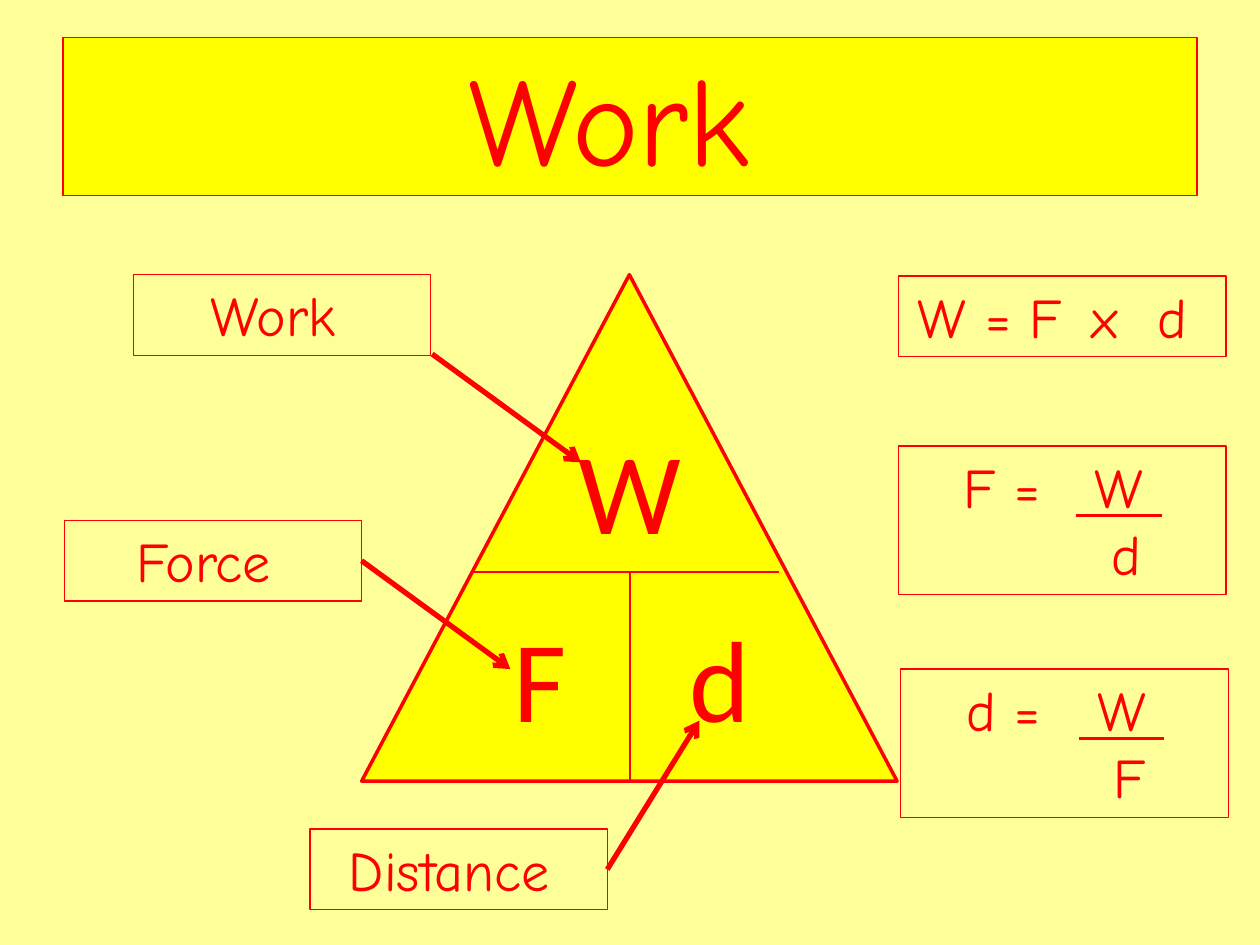
import pptx
import pptx.util
import pptx.dml.color
import pptx.enum.shapes
import pptx.enum.text
import pptx.oxml.ns
import lxml.etree

Inches = pptx.util.Inches
Pt = pptx.util.Pt
RGBColor = pptx.dml.color.RGBColor
SHAPE = pptx.enum.shapes.MSO_SHAPE
ALIGN = pptx.enum.text.PP_ALIGN
ANCHOR = pptx.enum.text.MSO_ANCHOR
qn = pptx.oxml.ns.qn

RED = RGBColor(0xFF, 0x00, 0x00)
YELLOW = RGBColor(0xFF, 0xFF, 0x00)
PALE_YELLOW = RGBColor(0xFF, 0xFF, 0x99)
HAND_FONT = "Comic Neue"
PLAIN_FONT = "Calibri"

LABEL_SIZE = (2.36, 0.64)
FORMULA_WIDTH = 2.6
FRACTION_INSET = 0.52
FRACTION_TAB = 0.89
DENOMINATOR_INDENT = 1.17


def add_text(paragraph, text, size=32, font=HAND_FONT, align=ALIGN.CENTER,
             underline=None, spacing=None):
    """Add one formatted run to a paragraph."""
    paragraph.alignment = align
    run = paragraph.add_run()
    run.text = text
    run.font.size = Pt(size)
    run.font.name = font
    run.font.color.rgb = RED
    run.font.underline = underline
    if spacing:
        run.font._element.set("spc", str(spacing * 100))


def style_shape(shape, fill=None, line_width=0.75):
    if fill is None:
        shape.fill.background()
    else:
        shape.fill.solid()
        shape.fill.fore_color.rgb = fill
    shape.line.color.rgb = RED
    shape.line.width = Pt(line_width)


def add_outlined_shape(slide, kind, left, top, width, height, **style):
    shape = slide.shapes.add_shape(kind, Inches(left), Inches(top),
                                   Inches(width), Inches(height))
    shape.shadow.inherit = False
    style_shape(shape, **style)
    shape.text_frame.word_wrap = True
    shape.text_frame.vertical_anchor = ANCHOR.TOP
    return shape


def add_label(slide, text, left, top):
    label = add_outlined_shape(slide, SHAPE.RECTANGLE, left, top, *LABEL_SIZE)
    add_text(label.text_frame.paragraphs[0], text)
    return label


def add_letter(slide, letter, left, top):
    box = slide.shapes.add_textbox(Inches(left), Inches(top),
                                   Inches(1.1), Inches(1.21))
    box.text_frame.word_wrap = True
    add_text(box.text_frame.paragraphs[0], letter, size=66, font=PLAIN_FONT)


def add_line(slide, start, end, width=0.75, arrow=False, source=None):
    """Draw a line, optionally with an arrowhead or joined to a label's right side."""
    line = slide.shapes.add_connector(
        pptx.enum.shapes.MSO_CONNECTOR.STRAIGHT,
        *(Inches(value) for value in start + end))
    line.line.color.rgb = RED
    line.line.width = Pt(width)
    if arrow:
        lxml.etree.SubElement(line.line._get_or_add_ln(), qn("a:tailEnd"), type="arrow")
    lxml.etree.SubElement(line._element.spPr, qn("a:effectLst"))
    if source is not None:
        line.begin_connect(source, 3)


def add_fraction(slide, left, top, subject, numerator, denominator):
    """Draw a boxed formula: subject = numerator over denominator."""
    box = add_outlined_shape(slide, SHAPE.RECTANGLE, left, top, FORMULA_WIDTH, 1.18)
    frame = box.text_frame
    frame.margin_left = Inches(FRACTION_INSET)

    # The tab stop sets the gap before the underlined numerator
    upper = frame.paragraphs[0]
    add_text(upper, f"{subject} =\t", align=ALIGN.LEFT)
    add_text(upper, f" {numerator} ", align=ALIGN.LEFT, underline=True)
    tabs = lxml.etree.SubElement(upper._p.get_or_add_pPr(), qn("a:tabLst"))
    lxml.etree.SubElement(tabs, qn("a:tab"), pos=str(Inches(FRACTION_TAB)), algn="l")

    lower = frame.add_paragraph()
    add_text(lower, denominator, align=ALIGN.LEFT)
    properties = lower._p.get_or_add_pPr()
    properties.set("marL", str(Inches(DENOMINATOR_INDENT)))
    properties.set("indent", "0")


def add_title(slide):
    title = slide.shapes.title
    title.left, title.top = Inches(0.5), Inches(0.3)
    title.width, title.height = Inches(9), Inches(1.25)
    style_shape(title, fill=YELLOW)
    title.text_frame.vertical_anchor = ANCHOR.MIDDLE
    add_text(title.text_frame.paragraphs[0], "Work ", size=72)


def add_triangle(slide):
    add_outlined_shape(slide, SHAPE.ISOSCELES_TRIANGLE, 2.87, 2.18, 4.25, 4.02,
                       fill=YELLOW, line_width=2)
    add_line(slide, (3.74, 4.54), (6.18, 4.54))
    add_line(slide, (5, 4.54), (5, 6.19))
    add_letter(slide, "W", 4.45, 3.28)
    add_letter(slide, "d", 5.16, 4.77)
    add_letter(slide, "F", 3.74, 4.77)


def add_labels(slide):
    add_label(slide, "Work ", 1.06, 2.18)
    force = add_label(slide, "Force ", 0.51, 4.13)
    distance = add_label(slide, "Distance ", 2.46, 6.58)
    add_line(slide, (3.43, 2.81), (4.61, 3.67), width=3, arrow=True)
    add_line(slide, (2.87, 4.45), (4.05, 5.31), width=3, arrow=True, source=force)
    add_line(slide, (4.82, 6.9), (5.55, 5.72), width=3, arrow=True, source=distance)


def add_formulas(slide):
    product = add_outlined_shape(slide, SHAPE.RECTANGLE, 7.13, 2.19, FORMULA_WIDTH, 0.64)
    paragraph = product.text_frame.paragraphs[0]
    add_text(paragraph, "W = F")
    add_text(paragraph, " x ", spacing=6)
    add_text(paragraph, "d ")
    add_fraction(slide, 7.13, 3.54, "F", "W", "d")
    add_fraction(slide, 7.15, 5.31, "d", "W", "F")


def main():
    presentation = pptx.Presentation()
    presentation.slide_width = Inches(10)
    presentation.slide_height = Inches(7.5)
    slide = presentation.slides.add_slide(presentation.slide_layouts[5])
    slide.background.fill.solid()
    slide.background.fill.fore_color.rgb = PALE_YELLOW

    add_title(slide)
    add_triangle(slide)
    add_labels(slide)
    add_formulas(slide)
    presentation.save("out.pptx")


if __name__ == "__main__":
    main()
